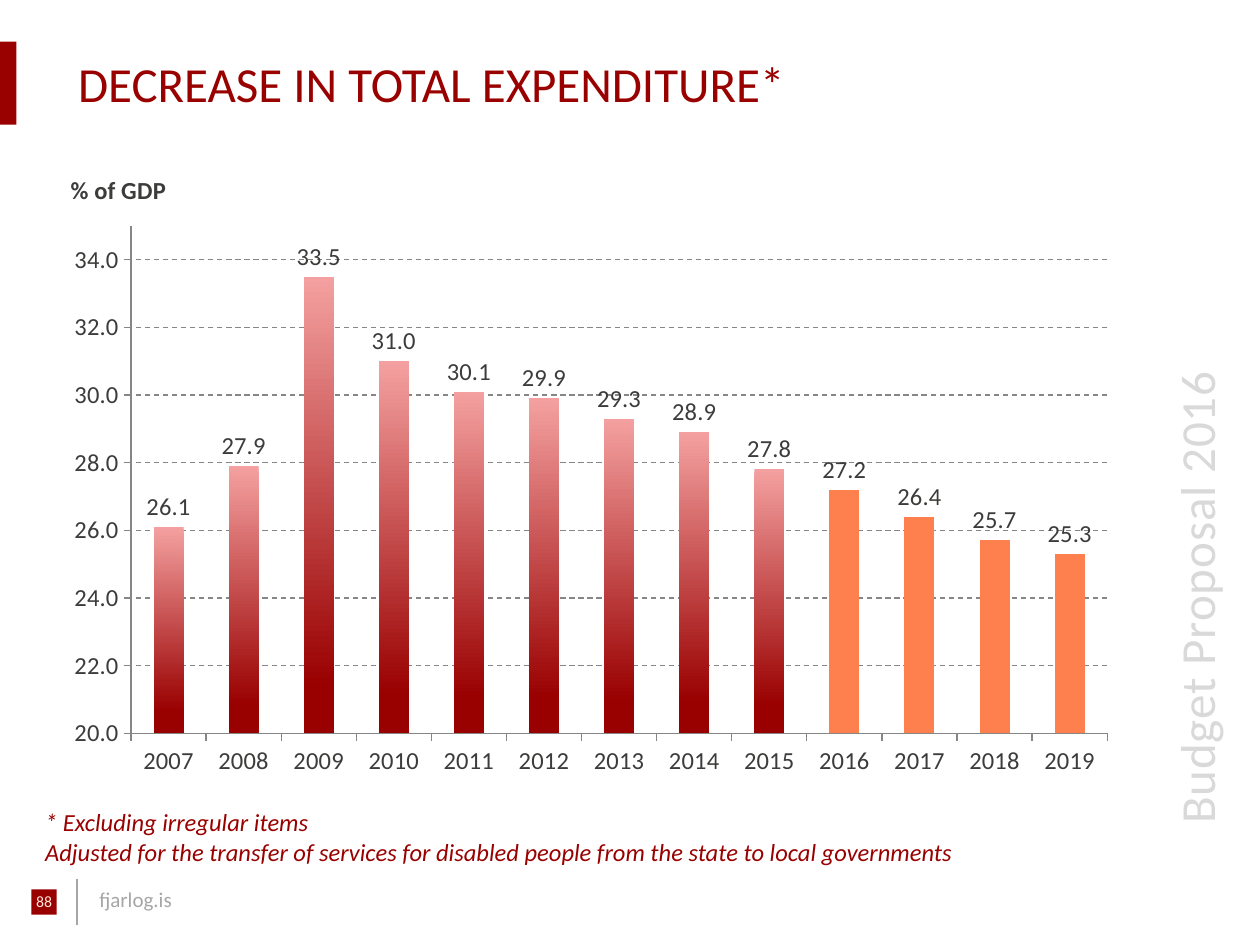
from lxml import etree
from pptx import Presentation
from pptx.chart.data import CategoryChartData
from pptx.dml.color import RGBColor
from pptx.enum import chart as ch, dml, shapes, text
from pptx.oxml.ns import qn
from pptx.util import Inches, Pt

COLORS = {"red": "990000", "pink": "F4A0A0", "orange": "FF804F", "ink": "3C3C3B",
          "gray": "A6A6A6", "pale": "D9D9D9", "cream": "FFE6DC", "grid": "868686"}


def rgb(name):
    return RGBColor.from_string(COLORS[name])


class Deck:
    """Holds the style and the current slide."""
    font = "Calibri"

    def __init__(self):
        self.prs = Presentation()
        self.prs.slide_width, self.prs.slide_height = Inches(10), Inches(7.5)
        self.s = self.prs.slides.add_slide(self.prs.slide_layouts[5])

    def style(self, font, color, **formats):
        for name, value in {"name": self.font, **formats}.items():
            setattr(font, name, value)
        font.color.rgb = rgb(color)

    def place(self, sp, box):
        for name, value in zip(("left", "top", "width", "height"), box):
            setattr(sp, name, Inches(value))

    def fill_text(self, tf, lines, color, align=text.PP_ALIGN.LEFT, margins=(0.1, 0.05),
                  anchor=text.MSO_ANCHOR.TOP, **formats):
        x, y = (Inches(m) for m in margins)
        frame = {"word_wrap": True, "auto_size": text.MSO_AUTO_SIZE.NONE,
                 "vertical_anchor": anchor, "margin_left": x, "margin_right": x,
                 "margin_top": y, "margin_bottom": y}
        for name, value in frame.items():
            setattr(tf, name, value)
        for i, line in enumerate(lines):
            p = tf.add_paragraph() if i else tf.paragraphs[0]
            p.alignment = align
            r = p.add_run()
            r.text = line
            self.style(r.font, color, **formats)

    def title(self, line, box, **formats):
        sp = self.s.shapes.title
        self.place(sp, box)
        self.fill_text(sp.text_frame, [line], **formats)

    def text(self, lines, box, **formats):
        sp = self.s.shapes.add_textbox(*map(Inches, box))
        self.fill_text(sp.text_frame, lines, **formats)
        return sp

    def block(self, box, color):
        sp = self.s.shapes.add_shape(shapes.MSO_SHAPE.RECTANGLE, *map(Inches, box))
        sp.shadow.inherit = False
        sp.fill.solid()
        sp.fill.fore_color.rgb = rgb(color)
        sp.line.fill.background()

    def line(self, ends, color):
        sp = self.s.shapes.add_connector(shapes.MSO_CONNECTOR.STRAIGHT, *map(Inches, ends))
        sp.line.color.rgb = rgb(color)
        sp.line.width = Pt(1)
        etree.SubElement(sp._element.spPr, qn("a:effectLst"))

    def layout(self, parent, index, **values):
        """Set a manual layout on a chart part, at the given child index."""
        for old in parent.findall(qn("c:layout")):
            parent.remove(old)
        layout = etree.Element(qn("c:layout"))
        manual = etree.SubElement(layout, qn("c:manualLayout"))
        for tag, value in values.items():
            etree.SubElement(manual, qn(f"c:{tag}")).set("val", str(value))
        parent.insert(index, layout)

    def chart(self, box, cats, vals, first_forecast, axis_title):
        data = CategoryChartData(number_format="0.0")
        data.categories = cats
        data.add_series("Series 1", vals)
        chart = self.s.shapes.add_chart(
            ch.XL_CHART_TYPE.COLUMN_CLUSTERED, *map(Inches, box), data).chart
        chart.has_legend = chart.has_title = False
        self.style(chart.font, "ink", size=Pt(14))
        self.layout(chart._chartSpace.chart.plotArea, 0, layoutTarget="inner",
                    xMode="edge", yMode="edge", x=0.064, y=0.105, w=0.918, h=0.791)

        # Axes
        axis = chart.value_axis
        formats = {"minimum_scale": 20, "maximum_scale": 35, "major_unit": 2,
                   "has_major_gridlines": True}
        for name, value in formats.items():
            setattr(axis, name, value)
        axis.tick_labels.number_format = "0.0"
        axis.tick_labels.number_format_is_linked = False
        grid = axis.major_gridlines.format.line
        grid.dash_style = dml.MSO_LINE.DASH
        for line in (grid, axis.format.line, chart.category_axis.format.line):
            line.color.rgb = rgb("grid")
            line.width = Pt(0.75)
        for ax in (axis, chart.category_axis):
            ax.major_tick_mark = ch.XL_TICK_MARK.OUTSIDE
        chart.category_axis.tick_label_position = ch.XL_TICK_LABEL_POSITION.LOW

        # Axis title, horizontal above the axis
        tf = axis.axis_title.text_frame
        tf.text = axis_title
        self.style(tf.paragraphs[0].runs[0].font, "ink", size=Pt(14), bold=True)
        tf._txBody.find(qn("a:bodyPr")).set("rot", "0")
        self.layout(axis.axis_title._element, 1, xMode="edge", yMode="edge", x=0.003, y=0.015)

        # Columns: gradient for past years, flat colour for the forecast
        plot = chart.plots[0]
        plot.gap_width = 150
        plot.vary_by_categories = False
        series = plot.series[0]
        fill = series.format.fill
        fill.gradient()
        fill.gradient_angle = 270
        for stop, color, position in zip(fill.gradient_stops, ("pink", "red"), (0, 0.9)):
            stop.color.rgb = rgb(color)
            stop.position = position
        for i in range(first_forecast, len(vals)):
            point = series.points[i].format.fill
            point.solid()
            point.fore_color.rgb = rgb("orange")
        labels = series.data_labels
        formats = {"show_value": True, "number_format": "0.0", "number_format_is_linked": False,
                   "position": ch.XL_LABEL_POSITION.OUTSIDE_END}
        for name, value in formats.items():
            setattr(labels, name, value)
        self.style(labels.font, "ink", size=Pt(14))


def main():
    d = Deck()
    wide = (0.12, 0.06)

    # Frame: accent blocks, side text and footer
    d.block((0.25, 7.06, 0.2, 0.2), "red")
    d.block((0, 0.33, 0.13, 0.66), "red")
    side = d.text(["Budget Proposal 2016"], (6.78, 3.64, 5.42, 0.57), color="pale", size=Pt(28))
    side.rotation = 270
    side.text_frame.paragraphs[0].runs[0].font._element.set("spc", "50")
    d.text(["fjarlog.is"], (0.69, 6.99, 1.87, 0.3), color="gray", size=Pt(12))
    d.line((0.61, 6.98, 0.61, 7.34), "gray")
    d.text(["88"], (0, 7.02, 0.7, 0.47), color="cream", size=Pt(9),
           align=text.PP_ALIGN.CENTER, margins=wide)

    # Title
    d.title("DECREASE IN TOTAL EXPENDITURE*", (0.5, 0.33, 9.06, 0.66), color="red",
            size=Pt(28), margins=wide, anchor=text.MSO_ANCHOR.MIDDLE)

    # Expenditure chart
    years = [str(year) for year in range(2007, 2020)]
    spending = [26.1, 27.9, 33.5, 31.0, 30.1, 29.9, 29.3, 28.9, 27.8, 27.2, 26.4, 25.7, 25.3]
    d.chart((0.5, 1.26, 8.44, 5.09), years, spending, years.index("2016"), "% of GDP")

    # Footnote
    d.text(["* Excluding irregular items",
            "Adjusted for the transfer of services for disabled people "
            "from the state to local governments"],
           (0.26, 6.36, 8.5, 0.57), color="red", size=Pt(14), italic=True)

    d.prs.save("out.pptx")


if __name__ == "__main__":
    main()
